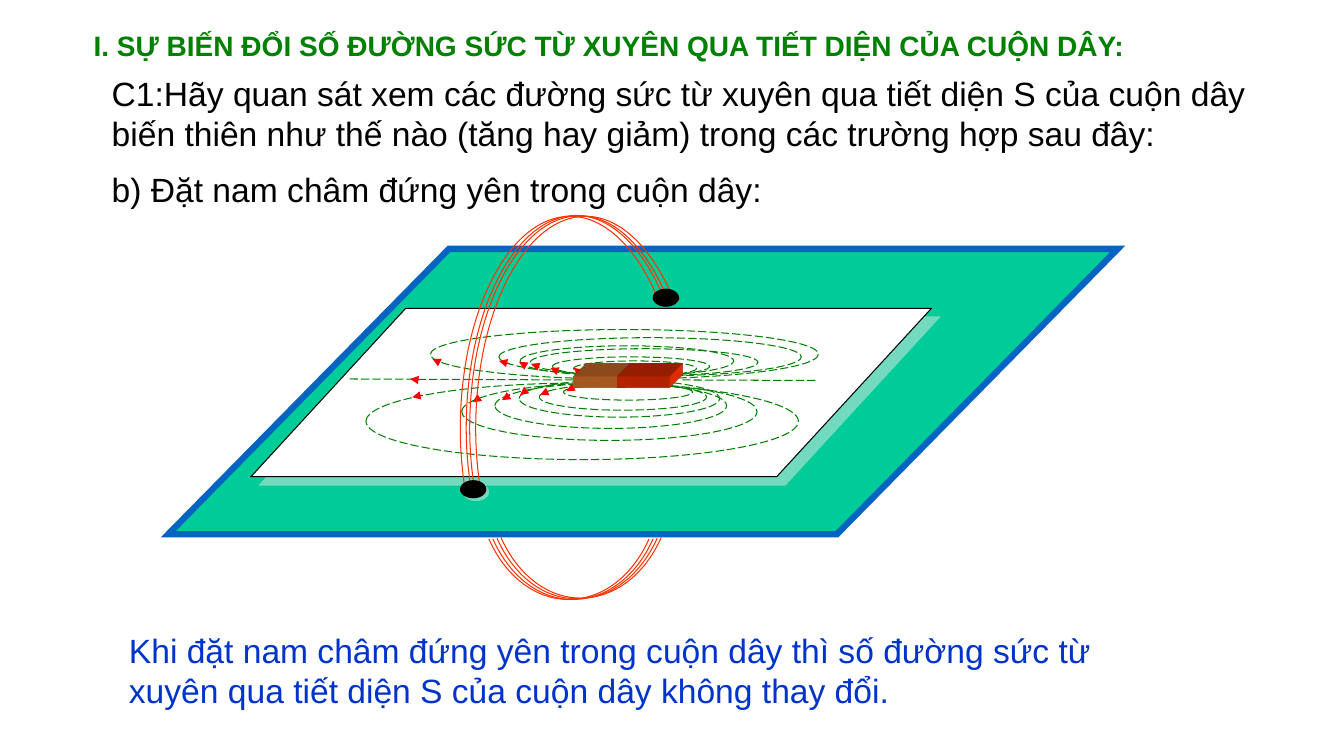
from lxml import etree
from pptx import Presentation
from pptx import util as u
from pptx.dml.color import RGBColor
from pptx.enum import dml, shapes, text
from pptx.oxml.ns import qn

COLORS = {
    "green": "008000", "black": "000000", "blue": "0033CC", "white": "FFFFFF",
    "table": "00CC99", "edge": "0563C1", "wire": "FF3300", "arrow": "FF0000",
    "shade": "E7E6E6", "north": "ED7D31", "south": "FF3300",
}

# Text: wording, (left, top, width, height), size, colour, bold
TEXTS = [
    ("b) Đặt nam châm đứng yên trong cuộn dây:",
     (72.7, 117.4, 486, 36), 24, "black", False),
    ("Khi đặt nam châm đứng yên trong cuộn dây thì số đường sức từ xuyên qua "
     "tiết diện S của cuộn dây không thay đổi.",
     (85, 446.4, 730.8, 65.5), 24, "blue", False),
    ("C1:Hãy quan sát xem các đường sức từ xuyên qua tiết diện S của cuộn dây "
     "biến thiên như thế nào (tăng hay giảm) trong các trường hợp sau đây:",
     (72.7, 48.2, 829.4, 65.5), 24, "black", False),
    ("I. SỰ BIẾN ĐỔI SỐ ĐƯỜNG SỨC TỪ XUYÊN QUA TIẾT DIỆN CỦA CUỘN DÂY:",
     (59.8, 16.6, 781.2, 31.7), 20, "green", True),
]

# Field lines: ellipses (left, top, width, height) and the two axis lines
FIELD_LOOPS = [
    (307.4, 235.4, 277.2, 35.3), (409.7, 257.8, 87.8, 10.8),
    (394.6, 254.9, 112.3, 13.7), (378.7, 249.1, 162.7, 19.4),
    (371.5, 247, 152.6, 21.6), (356.4, 241.2, 216, 27.4),
    (261.4, 273.6, 308.9, 54.7), (402.5, 274.3, 92.2, 11.5),
    (385.2, 274.3, 119.5, 18.7), (370.8, 271.4, 143.3, 26.6),
    (329.8, 273.6, 211, 41), (353.5, 273.6, 165.6, 32.4),
]
FIELD_AXIS = [(487.4, 271.4, 584.6, 271.8), (409.7, 271.4, 247.7, 270.7)]
FIELD_ARROWS = [
    (298.8, 271.4, 293, 270.7), (301.7, 282.2, 294.5, 283.7),
    (342, 284.4, 337.7, 287.3), (364.3, 282.2, 358.6, 285.8),
    (375.1, 279.4, 371.5, 282.2), (391.7, 279.4, 385.9, 282.2),
    (409.7, 276.5, 404.6, 279.4), (313.2, 258.5, 308.9, 256.3),
    (364.3, 259.9, 356.4, 257.8), (375.8, 261.4, 370.8, 258.5),
    (385.2, 262.1, 379.4, 259.9), (398.2, 265, 393.1, 262.8),
    (414.7, 266.4, 409.7, 262.8),
]

# Coil: Bezier points of one turn, then the shift of each turn
COIL_BOTTOM = [(355, 384.5), (367.2, 411.8), (388.8, 427.7), (411.8, 427.7),
               (435.6, 427.7), (457.2, 411.8), (469.4, 384.5)]
BOTTOM_SHIFTS = [(0, 0), (-2.9, 0.5), (2.9, -0.5), (-5.8, 0.5)]
COIL_TOP = [(478.1, 216.7), (463, 177.8), (439.2, 154.1), (414, 154.1),
            (370.8, 154.1), (335.5, 221.8), (335.5, 306),
            (335.5, 322.6), (337, 338.4), (339.8, 354.2)]
TOP_SHIFTS = [(0, 0), (-2.5, -0.2), (4.3, 0.4), (-6.7, 0.4)]
COIL_RIMS = [(329, 347, 18.7, 6.5), (466.6, 209.5, 18.7, 7.2)]
COIL_HOLES = [((329, 343.4, 18, 12.2), 2.8), ((466.6, 206.6, 18, 12.2), 0)]

POLES = [("north", (409.7, 268.6, 36.7, 7.9)), ("south", (441.4, 268.6, 36.7, 7.9))]
POLE_DEPTH = 26

deck = Presentation()
deck.slide_width, deck.slide_height = u.Pt(960), u.Pt(540)
page = deck.slides.add_slide(deck.slide_layouts[6])


def rgb(name):
    return RGBColor.from_string(COLORS[name])


def set_line(item, color, width=0.75, dash=None):
    item.line.color.rgb = rgb(color)
    for name, value in {"width": u.Pt(width), "dash_style": dash}.items():
        setattr(item.line, name, value)
    etree.SubElement(item.line._get_or_add_ln(), qn("a:miter"), lim="800000")


def style(shape, fill=None, line=None, width=0.75, dash=None):
    shape.shadow.inherit = False
    if fill:
        shape.fill.solid()
        shape.fill.fore_color.rgb = rgb(fill)
    else:
        shape.fill.background()
    if line:
        set_line(shape, line, width, dash)
    else:
        shape.line.fill.background()
    return shape


def add_preset(kind, place, **look):
    shape = page.shapes.add_shape(kind, *[u.Pt(v) for v in place])
    return style(shape, **look)


def add_line(ends, color, dash=None, arrow=False):
    line = page.shapes.add_connector(shapes.MSO_CONNECTOR.STRAIGHT,
                                     *[u.Pt(v) for v in ends])
    set_line(line, color, dash=dash)
    if arrow:
        etree.SubElement(line.line._get_or_add_ln(), qn("a:tailEnd"), type="triangle")
    etree.SubElement(line._element.spPr, qn("a:effectLst"))


def add_shadow(shape, distance):
    effects = shape._element.spPr.find(qn("a:effectLst"))
    shadow = etree.SubElement(effects, qn("a:outerShdw"), blurRad="0",
                              dist=str(u.Pt(distance)), dir="2700000",
                              algn="ctr", rotWithShape="0")
    color = etree.SubElement(shadow, qn("a:srgbClr"), val=COLORS["shade"])
    etree.SubElement(color, qn("a:alpha"), val="50000")


def add_depth(shape, depth, color):
    """Extrude a shape towards the upper right."""
    props = shape._element.spPr
    scene = etree.SubElement(props, qn("a:scene3d"))
    etree.SubElement(scene, qn("a:camera"), prst="legacyObliqueTopRight")
    etree.SubElement(scene, qn("a:lightRig"), rig="legacyFlat3", dir="b")
    solid = etree.SubElement(props, qn("a:sp3d"), extrusionH=str(u.Pt(depth)),
                             prstMaterial="legacyMatrix")
    tint = etree.SubElement(solid, qn("a:extrusionClr"))
    etree.SubElement(tint, qn("a:srgbClr"), val=COLORS[color])


def add_turns(points, shifts):
    """Draw each turn as one open curve; every three points form a Bezier piece."""
    for dx, dy in shifts:
        turn = [(x + dx, y + dy) for x, y in points]
        builder = page.shapes.build_freeform(*turn[0], scale=1)
        builder = page.shapes.build_freeform(*[u.Pt(v) for v in turn[0]])
        builder.add_line_segments([(u.Pt(x), u.Pt(y)) for x, y in turn[1:]], close=False)
        shape = style(builder.convert_to_shape(), line="wire")
        segments = list(shape._element.iter(qn("a:lnTo")))
        for start in range(0, len(segments), 3):
            curve = etree.Element(qn("a:cubicBezTo"))
            segments[start].addprevious(curve)
            for segment in segments[start:start + 3]:
                curve.append(segment[0])
                segment.getparent().remove(segment)


SLANTED, OVAL = shapes.MSO_SHAPE.PARALLELOGRAM, shapes.MSO_SHAPE.OVAL
DASH = dml.MSO_LINE.LONG_DASH

# Table top, lower half of the coil, sheet
table = add_preset(SLANTED, (120.2, 177.8, 678.2, 203.8), fill="table",
                   line="edge", width=4.5)
table.adjustments[0] = 0.984
add_turns(COIL_BOTTOM, BOTTOM_SHIFTS)
sheet = add_preset(SLANTED, (179.3, 220.3, 486, 120.2), fill="white", line="black")
sheet.adjustments[0] = 0.919
add_shadow(sheet, 8.5)

# Magnetic field
for loop in FIELD_LOOPS:
    add_preset(OVAL, loop, line="green", dash=DASH)
for ends in FIELD_AXIS:
    add_line(ends, "green", dash=DASH)
for ends in FIELD_ARROWS:
    add_line(ends, "arrow", arrow=True)

# Bar magnet
for pole, place in POLES:
    add_depth(add_preset(shapes.MSO_SHAPE.RECTANGLE, place, fill=pole), POLE_DEPTH, pole)

# Upper half of the coil and its holes
add_turns(COIL_TOP, TOP_SHIFTS)
for rim in COIL_RIMS:
    add_preset(OVAL, rim, line="wire")
for place, distance in COIL_HOLES:
    hole = add_preset(OVAL, place, fill="black", line="black")
    if distance:
        add_shadow(hole, distance)

# Wording
for words, place, size, color, bold in TEXTS:
    box = page.shapes.add_textbox(*[u.Pt(v) for v in place])
    box.text_frame.word_wrap = True
    box.text_frame.auto_size = text.MSO_AUTO_SIZE.SHAPE_TO_FIT_TEXT
    para = box.text_frame.paragraphs[0]
    span = para.add_run()
    span.text = words
    for name, value in {"name": "Arial", "size": u.Pt(size), "bold": bold}.items():
        setattr(span.font, name, value)
    span.font.color.rgb = rgb(color)

deck.save("out.pptx")
